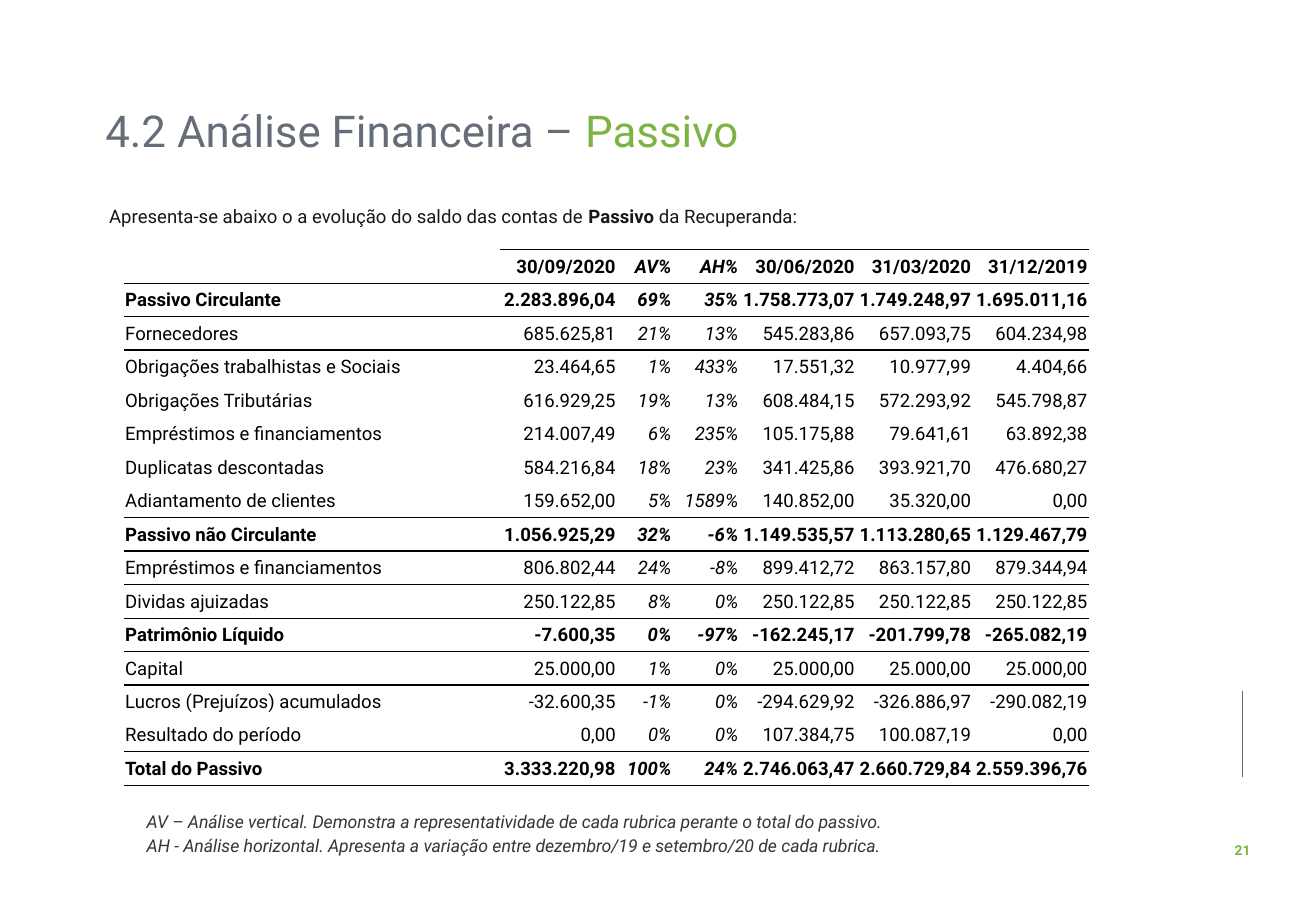
from dataclasses import dataclass

from lxml import etree
from pptx import Presentation
from pptx.dml.color import RGBColor
from pptx.enum.shapes import MSO_CONNECTOR
from pptx.enum.text import MSO_ANCHOR, PP_ALIGN
from pptx.oxml.ns import qn
from pptx.slide import Slide
from pptx.table import _Cell
from pptx.util import Pt

STRAIGHT = MSO_CONNECTOR.STRAIGHT
MIDDLE = MSO_ANCHOR.MIDDLE
LEFT, RIGHT = PP_ALIGN.LEFT, PP_ALIGN.RIGHT
CENTER, JUSTIFY = PP_ALIGN.CENTER, PP_ALIGN.JUSTIFY

FONT = "Roboto"
BLACK = RGBColor(0x00, 0x00, 0x00)
GREEN = RGBColor(0x7C, 0xB3, 0x42)
SLATE = RGBColor(0x65, 0x6D, 0x78)
INK = RGBColor(0x18, 0x17, 0x17)
CHARCOAL = RGBColor(0x33, 0x36, 0x3C)

NO_GRID_STYLE = "{2D5ABB26-0587-4C30-8999-92F81FD0307C}"
COLUMN_WIDTHS = (223, 69, 33, 39.7, 69, 69, 69)
ROW_HEIGHT = 19.85
PERCENT_COLUMNS = (2, 3)


@dataclass(frozen=True)
class Run:
    text: str
    color: RGBColor
    bold: bool = False


@dataclass(frozen=True)
class TextBlock:
    left: float
    top: float
    width: float
    height: float
    paragraphs: tuple[tuple[Run, ...], ...]
    size: float
    alignment: PP_ALIGN = JUSTIFY
    spacing: float = 1.0
    italic: bool = False
    indent: float = 0
    wrap: bool = True
    side_inset: float = 7.2
    top_inset: float = 3.6


@dataclass(frozen=True)
class BalanceRow:
    cells: tuple[str, ...]
    subtotal: bool = False


TEXT_BLOCKS = (
    TextBlock(724.3, 495.4, 24.5, 17.3, ((Run("21", GREEN, True),),), 8.1,
              CENTER, wrap=False),
    TextBlock(56.2, 61.9, 589, 38.2,
              ((Run("4.2 Análise Financeira – ", SLATE), Run("Passivo", GREEN)),),
              26, LEFT, 0.9, side_inset=6.2, top_inset=3.1),
    TextBlock(57.6, 111.6, 626.4, 25.2,
              ((Run("Apresenta-se abaixo o a evolução do saldo das contas de ", INK),
                Run("Passivo", INK, True),
                Run(" da Recuperanda:", INK)),), 11, spacing=1.5),
    TextBlock(57.6, 475.2, 626.4, 35.3,
              ((Run("AV – Análise vertical. Demonstra a representatividade de cada "
                    "rubrica perante o total do passivo.", CHARCOAL),),
               (Run("AH - Análise horizontal. Apresenta a variação entre dezembro/19 "
                    "e setembro/20 de cada rubrica.", CHARCOAL),)),
              10.5, spacing=1.14, italic=True, indent=22.3),
)

BALANCE = (
    BalanceRow(("", "30/09/2020", "AV%", "AH%", "30/06/2020", "31/03/2020", "31/12/2019")),
    BalanceRow(("Passivo Circulante", "2.283.896,04", "69%", "35%",
                "1.758.773,07", "1.749.248,97", "1.695.011,16"), True),
    BalanceRow(("Fornecedores", "685.625,81", "21%", "13%",
                "545.283,86", "657.093,75", "604.234,98")),
    BalanceRow(("Obrigações trabalhistas e Sociais", "23.464,65", "1%", "433%",
                "17.551,32", "10.977,99", "4.404,66")),
    BalanceRow(("Obrigações Tributárias", "616.929,25", "19%", "13%",
                "608.484,15", "572.293,92", "545.798,87")),
    BalanceRow(("Empréstimos e financiamentos", "214.007,49", "6%", "235%",
                "105.175,88", "79.641,61", "63.892,38")),
    BalanceRow(("Duplicatas descontadas", "584.216,84", "18%", "23%",
                "341.425,86", "393.921,70", "476.680,27")),
    BalanceRow(("Adiantamento de clientes", "159.652,00", "5%", "1589%",
                "140.852,00", "35.320,00", "0,00")),
    BalanceRow(("Passivo não Circulante", "1.056.925,29", "32%", "-6%",
                "1.149.535,57", "1.113.280,65", "1.129.467,79"), True),
    BalanceRow(("Empréstimos e financiamentos", "806.802,44", "24%", "-8%",
                "899.412,72", "863.157,80", "879.344,94")),
    BalanceRow(("Dividas ajuizadas", "250.122,85", "8%", "0%",
                "250.122,85", "250.122,85", "250.122,85")),
    BalanceRow(("Patrimônio Líquido", "-7.600,35", "0%", "-97%",
                "-162.245,17", "-201.799,78", "-265.082,19"), True),
    BalanceRow(("Capital", "25.000,00", "1%", "0%",
                "25.000,00", "25.000,00", "25.000,00")),
    BalanceRow(("Lucros (Prejuízos) acumulados", "-32.600,35", "-1%", "0%",
                "-294.629,92", "-326.886,97", "-290.082,19")),
    BalanceRow(("Resultado do período", "0,00", "0%", "0%",
                "107.384,75", "100.087,19", "0,00")),
    BalanceRow(("Total do Passivo", "3.333.220,98", "100%", "24%",
                "2.746.063,47", "2.660.729,84", "2.559.396,76"), True),
)


def draw_text(slide: Slide, block: TextBlock) -> None:
    shape = slide.shapes.add_textbox(
        Pt(block.left), Pt(block.top), Pt(block.width), Pt(block.height))
    frame = shape.text_frame
    frame.word_wrap = block.wrap
    frame.margin_left = frame.margin_right = Pt(block.side_inset)
    frame.margin_top = frame.margin_bottom = Pt(block.top_inset)
    for index, runs in enumerate(block.paragraphs):
        paragraph = frame.paragraphs[0] if index == 0 else frame.add_paragraph()
        paragraph.alignment = block.alignment
        paragraph.line_spacing = block.spacing
        if block.indent:
            properties = paragraph._p.get_or_add_pPr()
            properties.set("marL", str(Pt(block.indent)))
            properties.set("indent", "0")
        paragraph.font.name = FONT
        paragraph.font.size = Pt(block.size)
        paragraph.font.italic = block.italic
        for item in runs:
            run = paragraph.add_run()
            run.text = item.text
            run.font.bold = item.bold
            run.font.color.rgb = item.color


def rule_width(boundary: int) -> float:
    if boundary > 0 and BALANCE[boundary - 1].subtotal:
        return 1
    if boundary == 0 or BALANCE[boundary].subtotal:
        return 0.5
    return 0


def add_border(cell: _Cell, tag: str, width: float) -> None:
    line = etree.SubElement(cell._tc.get_or_add_tcPr(), qn(tag), w=str(Pt(width)))
    fill = etree.SubElement(line, qn("a:solidFill"))
    etree.SubElement(fill, qn("a:srgbClr"), val=str(BLACK))


def fill_cell(cell: _Cell, row: int, column: int) -> None:
    text = BALANCE[row].cells[column]
    cell.vertical_anchor = MIDDLE
    cell.margin_left = cell.margin_right = cell.margin_top = Pt(0.6)
    cell.margin_bottom = Pt(0)
    for tag, boundary in (("a:lnT", row), ("a:lnB", row + 1)):
        width = rule_width(boundary)
        if width and (boundary > 0 or text):
            add_border(cell, tag, width)
    cell.fill.background()
    paragraph = cell.text_frame.paragraphs[0]
    paragraph.alignment = RIGHT if column else LEFT
    font = paragraph.font
    font.name = FONT
    font.size = Pt(11)
    font.bold = row == 0 or BALANCE[row].subtotal
    font.italic = column in PERCENT_COLUMNS
    font.color.rgb = BLACK
    if text:
        paragraph.add_run().text = text
    else:
        paragraph._p.get_or_add_endParaRPr().set("sz", "1100")


def draw_balance(slide: Slide) -> None:
    table = slide.shapes.add_table(
        len(BALANCE), len(COLUMN_WIDTHS), Pt(73.6), Pt(148),
        Pt(sum(COLUMN_WIDTHS)), Pt(ROW_HEIGHT * len(BALANCE))).table
    table.first_row = table.horz_banding = False
    table._tbl.tblPr.find(qn("a:tableStyleId")).text = NO_GRID_STYLE
    for column, width in enumerate(COLUMN_WIDTHS):
        table.columns[column].width = Pt(width)
    for row in range(len(BALANCE)):
        table.rows[row].height = Pt(ROW_HEIGHT)
        for column in range(len(COLUMN_WIDTHS)):
            fill_cell(table.cell(row, column), row, column)


def draw_margin_line(slide: Slide) -> None:
    line = slide.shapes.add_connector(
        STRAIGHT, Pt(736.5), Pt(409.6), Pt(736.5), Pt(460.6))
    line.line.color.rgb = SLATE
    line.line.width = Pt(0.5)
    etree.SubElement(line._element.spPr, qn("a:effectLst"))


def main() -> None:
    presentation = Presentation()
    presentation.slide_width = Pt(780)
    presentation.slide_height = Pt(540)
    slide = presentation.slides.add_slide(presentation.slide_layouts[6])
    draw_margin_line(slide)
    for block in TEXT_BLOCKS:
        draw_text(slide, block)
    draw_balance(slide)
    presentation.save("out.pptx")


if __name__ == "__main__":
    main()
